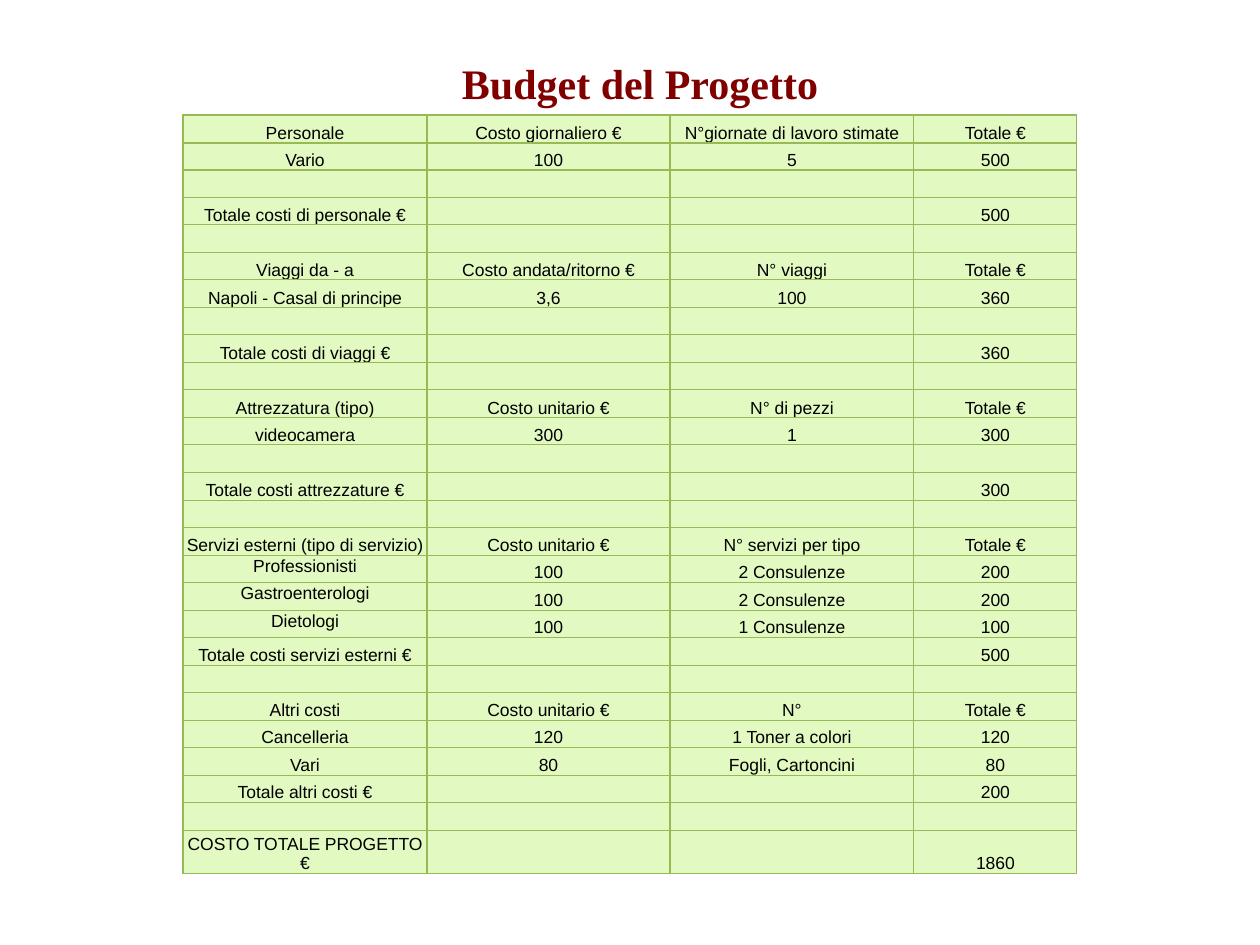
from lxml.etree import SubElement
from pptx import Presentation
from pptx.dml.color import RGBColor
from pptx.enum.text import MSO_ANCHOR, PP_ALIGN
from pptx.oxml.ns import qn
from pptx.util import Pt

PX = 914400 // 126
MAROON = RGBColor(0x80, 0x00, 0x00)
BLACK = RGBColor(0x00, 0x00, 0x00)
PALE_GREEN = RGBColor(0xE2, 0xFA, 0xC2)
BORDER_GREEN = RGBColor(0x98, 0xB9, 0x55)

TITLE = "Budget del Progetto"
BLANK = ("", "", "", "")
BUDGET = [
    ("Personale", "Costo giornaliero €", "N°giornate di lavoro stimate", "Totale €"),
    ("Vario", "100", "5", "500"),
    BLANK,
    ("Totale costi di personale €", "", "", "500"),
    BLANK,
    ("Viaggi da - a", "Costo andata/ritorno €", "N° viaggi", "Totale €"),
    ("Napoli - Casal di principe", "3,6", "100", "360"),
    BLANK,
    ("Totale costi di viaggi €", "", "", "360"),
    BLANK,
    ("Attrezzatura (tipo)", "Costo unitario €", "N° di pezzi", "Totale €"),
    ("videocamera", "300", "1", "300"),
    BLANK,
    ("Totale costi attrezzature €", "", "", "300"),
    BLANK,
    ("Servizi esterni (tipo di servizio)", "Costo unitario €", "N° servizi per tipo", "Totale €"),
    ("Professionisti", "100", "2 Consulenze", "200"),
    ("Gastroenterologi", "100", "2 Consulenze", "200"),
    ("Dietologi", "100", "1 Consulenze", "100"),
    ("Totale costi servizi esterni €", "", "", "500"),
    BLANK,
    ("Altri costi", "Costo unitario €", "N°", "Totale €"),
    ("Cancelleria", "120", "1 Toner a colori", "120"),
    ("Vari", "80", "Fogli, Cartoncini", "80"),
    ("Totale altri costi €", "", "", "200"),
    BLANK,
    ("COSTO TOTALE PROGETTO €", "", "", "1860"),
]
TOP_ALIGNED = {"Professionisti", "Gastroenterologi", "Dietologi"}
COLUMN_WIDTHS = (244, 243, 244, 163)
TABLE_LEFT, TABLE_TOP = 183, 115
ITEM_ROWS_HEIGHT, GRAND_TOTAL_HEIGHT = 716, 40


def style_paragraph(paragraph, font_name, size, color, bold=False):
    paragraph.alignment = PP_ALIGN.CENTER
    paragraph.font.name = font_name
    paragraph.font.size = Pt(size)
    paragraph.font.color.rgb = color
    paragraph.font.bold = bold


def add_borders(cell):
    properties = cell._tc.get_or_add_tcPr()
    for side in ("lnL", "lnR", "lnT", "lnB"):
        line = SubElement(properties, qn(f"a:{side}"), w=str(Pt(0.75)))
        fill = SubElement(line, qn("a:solidFill"))
        SubElement(fill, qn("a:srgbClr"), val=str(BORDER_GREEN))


def fill_cell(cell, text):
    add_borders(cell)
    cell.fill.solid()
    cell.fill.fore_color.rgb = PALE_GREEN
    cell.margin_left = cell.margin_right = cell.margin_top = PX
    cell.margin_bottom = 0
    cell.vertical_anchor = MSO_ANCHOR.TOP if text in TOP_ALIGNED else MSO_ANCHOR.BOTTOM
    paragraph = cell.text_frame.paragraphs[0]
    if text:
        paragraph.text = text
    else:
        SubElement(paragraph._p, qn("a:endParaRPr"), sz="1000")
    style_paragraph(paragraph, "Arial", 10, BLACK)


def main():
    presentation = Presentation()
    presentation.slide_width, presentation.slide_height = 1260 * PX, 945 * PX
    slide = presentation.slides.add_slide(presentation.slide_layouts[6])

    heading = slide.shapes.add_textbox(187 * PX, 51 * PX, 906 * PX, 75 * PX).text_frame
    heading.word_wrap = True
    heading.text = TITLE
    style_paragraph(heading.paragraphs[0], "Times New Roman", 24, MAROON, True)

    item_count = len(BUDGET) - 1
    edges = [round(i * ITEM_ROWS_HEIGHT / item_count) for i in range(len(BUDGET))]
    edges.append(ITEM_ROWS_HEIGHT + GRAND_TOTAL_HEIGHT)
    budget = slide.shapes.add_table(
        len(BUDGET), len(COLUMN_WIDTHS), TABLE_LEFT * PX, TABLE_TOP * PX,
        sum(COLUMN_WIDTHS) * PX, edges[-1] * PX,
    ).table
    budget.first_row = budget.horz_banding = False
    for column, width in zip(budget.columns, COLUMN_WIDTHS):
        column.width = width * PX
    for row, top, bottom, entries in zip(budget.rows, edges, edges[1:], BUDGET):
        row.height = (bottom - top) * PX
        for cell, text in zip(row.cells, entries):
            fill_cell(cell, text)

    presentation.save("out.pptx")


if __name__ == "__main__":
    main()
